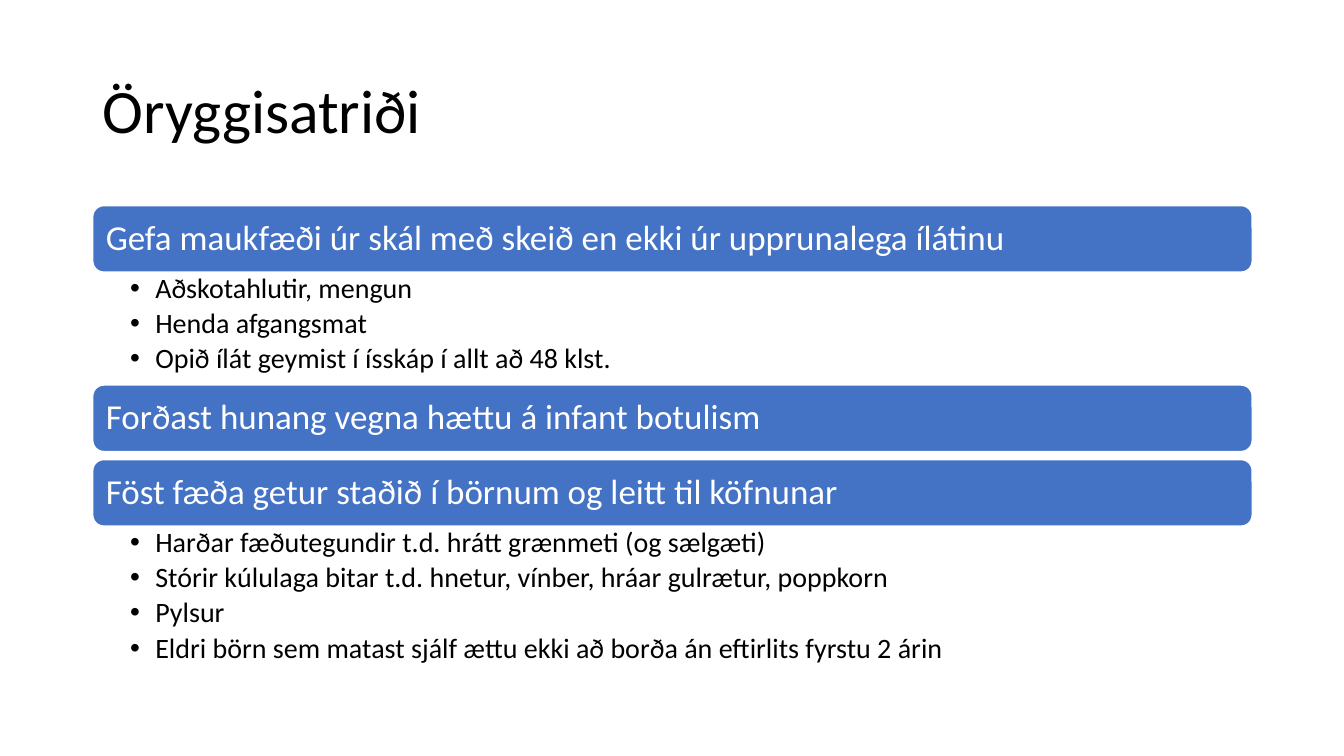
from lxml.etree import SubElement
from pptx import Presentation
from pptx.dml.color import RGBColor
from pptx.enum.shapes import MSO_SHAPE
from pptx.enum.text import MSO_ANCHOR, MSO_AUTO_SIZE, PP_ALIGN
from pptx.oxml.ns import qn
from pptx.util import Inches, Pt

TITLE = "Öryggisatriði"
SECTIONS = [
    ("Gefa maukfæði úr skál með skeið en ekki úr upprunalega ílátinu",
     ["Aðskotahlutir, mengun",
      "Henda afgangsmat",
      "Opið ílát geymist í ísskáp í allt að 48 klst."]),
    ("Forðast hunang vegna hættu á infant botulism", []),
    ("Föst fæða getur staðið í börnum og leitt til köfnunar",
     ["Harðar fæðutegundir t.d. hrátt grænmeti (og sælgæti)",
      "Stórir kúlulaga bitar t.d. hnetur, vínber, hráar gulrætur, poppkorn",
      "Pylsur",
      "Eldri börn sem matast sjálf ættu ekki að borða án eftirlits fyrstu 2 árin"]),
]

BLUE = RGBColor(0x44, 0x72, 0xC4)
WHITE = RGBColor(0xFF, 0xFF, 0xFF)
BLACK = RGBColor(0, 0, 0)
FONT = "Calibri"

LEFT, WIDTH = 0.92, 11.5
TITLE_TOP, TITLE_HEIGHT = 0.4, 1.45
FIRST_TOP = 2.04
BAR_HEIGHT, BAR_STEP, BAR_GAP = 0.66, 0.65, 0.09
ITEM_HEIGHT, LIST_PADDING = 0.37, 0.02


def place(box, top, height):
    box.left, box.top = Inches(LEFT), Inches(top)
    box.width, box.height = Inches(WIDTH), Inches(height)


def write(box, lines, size, color, anchor, insets, space_after=0):
    frame = box.text_frame
    frame.text = "\n".join(lines)
    frame.word_wrap = True
    frame.auto_size = MSO_AUTO_SIZE.NONE
    frame.vertical_anchor = anchor
    (frame.margin_left, frame.margin_top,
     frame.margin_right, frame.margin_bottom) = map(Inches, insets)
    for para in frame.paragraphs:
        para.alignment = PP_ALIGN.LEFT
        para.line_spacing = 0.9
        para.space_before = Pt(0)
        para.space_after = Pt(space_after)
        for span in para.runs:
            span.font.name = FONT
            span.font.size = Pt(size)
            span.font.color.rgb = color


def add_bullets(box):
    for para in box.text_frame.paragraphs:
        properties = para._p.get_or_add_pPr()
        properties.set("marL", str(Inches(0.25)))
        properties.set("indent", str(-Inches(0.25)))
        SubElement(properties, qn("a:buFont"), typeface="Arial")
        SubElement(properties, qn("a:buChar"), char="•")


def add_bar(page, heading, top):
    bar = page.shapes.add_shape(MSO_SHAPE.ROUNDED_RECTANGLE, 0, 0, 0, 0)
    place(bar, top, BAR_HEIGHT)
    bar.shadow.inherit = False
    bar.fill.solid()
    bar.fill.fore_color.rgb = BLUE
    bar.line.color.rgb = WHITE
    bar.line.width = Pt(1)
    write(bar, [heading], 25, WHITE, MSO_ANCHOR.MIDDLE, (0.1, 0.1, 0.1, 0.1))


def main():
    deck = Presentation()
    deck.slide_width, deck.slide_height = Inches(13.33), Inches(7.5)
    page = deck.slides.add_slide(deck.slide_layouts.get_by_name("Two Content"))

    title, *list_boxes = page.placeholders
    place(title, TITLE_TOP, TITLE_HEIGHT)
    write(title, [TITLE], 44, BLACK, MSO_ANCHOR.MIDDLE, (0.1, 0.05, 0.1, 0.05))

    free_boxes = iter(list_boxes)
    top = FIRST_TOP
    for heading, items in SECTIONS:
        add_bar(page, heading, top)
        top += BAR_STEP
        if items:
            box = next(free_boxes)
            height = ITEM_HEIGHT * len(items) + LIST_PADDING
            place(box, top, height)
            write(box, items, 20, BLACK, MSO_ANCHOR.TOP,
                  (0.37, 0.03, 0.19, 0.03), space_after=3.6)
            add_bullets(box)
            top += height
        else:
            top += BAR_GAP

    deck.save("out.pptx")


if __name__ == "__main__":
    main()
